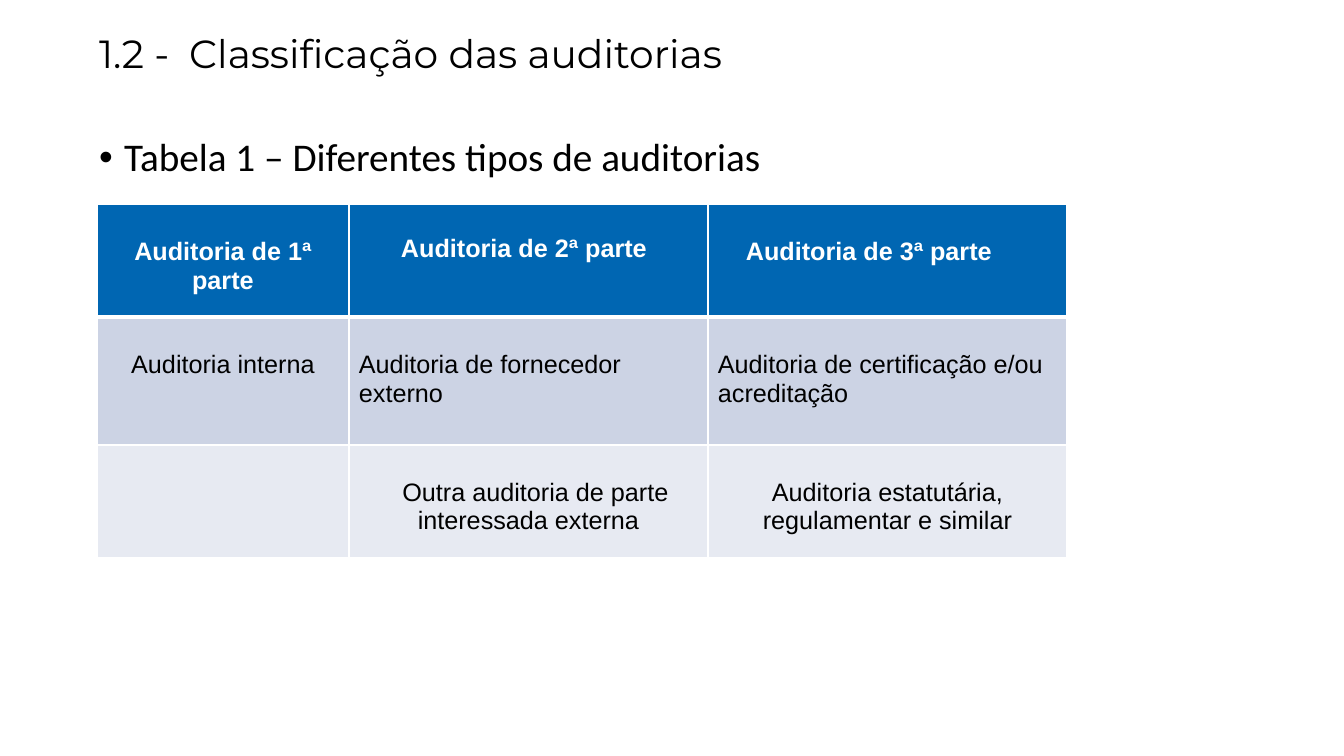
import pptx
import pptx.dml.color
import pptx.enum.text
import pptx.oxml
import pptx.oxml.ns
import pptx.util

ALIGN = pptx.enum.text.PP_ALIGN
ANCHOR = pptx.enum.text.MSO_ANCHOR


def px(length):
    return pptx.util.Emu(round(length * 914400 / 100.8))


def color(hex_string):
    return pptx.dml.color.RGBColor.from_string(hex_string)


def add_xml(parent, tag, attributes="", inner=""):
    namespace = pptx.oxml.ns.nsdecls("a")
    parent.append(pptx.oxml.parse_xml(
        f"<a:{tag} {namespace} {attributes}>{inner}</a:{tag}>"))


class AuditSlide:
    ink = "000000"
    paper = "FFFFFF"
    header_fill = "0066B2"
    row_fills = ("CCD3E4", "E7EAF2")

    def __init__(self, presentation):
        self.slide = presentation.slides.add_slide(presentation.slide_layouts[1])

    def style(self, paragraph, face, size, ink, align=ALIGN.LEFT, bold=False):
        paragraph.alignment = align
        paragraph.font.name = face
        paragraph.font.size = pptx.util.Pt(size)
        paragraph.font.bold = bold
        paragraph.font.color.rgb = color(ink)

    def placeholder(self, holder, box, text, face, anchor):
        holder.left, holder.top, holder.width, holder.height = map(px, box)
        frame = holder.text_frame
        frame.word_wrap = True
        frame.auto_size = pptx.enum.text.MSO_AUTO_SIZE.NONE
        frame.vertical_anchor = anchor
        paragraph = frame.paragraphs[0]
        paragraph.text = text
        paragraph.line_spacing = 0.9
        paragraph.space_before = pptx.util.Pt(0)
        return paragraph

    def title(self, box, text, tab):
        heading = self.placeholder(self.slide.shapes.title, box, text,
                                   "Montserrat", ANCHOR.MIDDLE)
        add_xml(heading._p.get_or_add_pPr(), "tabLst",
                inner=f'<a:tab pos="{px(tab)}" algn="l"/>')
        self.style(heading, "Montserrat", 28, self.ink)

    def bullet(self, box, text, indent):
        caption = self.placeholder(self.slide.placeholders[1], box, text,
                                   "Calibri", ANCHOR.TOP)
        properties = caption._p.get_or_add_pPr()
        properties.set("marL", str(px(indent)))
        properties.set("indent", str(-px(indent)))
        add_xml(properties, "buFont", 'typeface="Arial"')
        add_xml(properties, "buChar", 'char="•"')
        self.style(caption, "Calibri", 28, self.ink)

    def borders(self, cell, top, bottom):
        properties = cell._tc.get_or_add_tcPr()
        for side, points in zip("LRTB", (1, 1, top, bottom)):
            add_xml(properties, f"ln{side}", f'w="{pptx.util.Pt(points)}"',
                    f'<a:solidFill><a:srgbClr val="{self.paper}"/></a:solidFill>')

    def cell(self, cell, row, lines, align, left, top, first_indent):
        header = row == 0
        self.borders(cell, 3 if row == 1 else 1, 3 if header else 1)
        cell.fill.solid()
        cell.fill.fore_color.rgb = color(
            self.header_fill if header else self.row_fills[row - 1])
        cell.margin_left, cell.margin_top = px(left), px(top)
        cell.text = lines
        for paragraph in cell.text_frame.paragraphs:
            self.style(paragraph, "Arial", 18, self.paper if header else self.ink,
                       align, header)
        if first_indent:
            properties = cell.text_frame.paragraphs[0]._p.get_or_add_pPr()
            properties.set("marL", str(px(first_indent)))
            properties.set("indent", "0")

    def table(self, left, top, widths, heights, rows):
        box = map(px, (left, top, sum(widths), sum(heights)))
        audits = self.slide.shapes.add_table(len(rows), len(widths), *box).table
        audits.horz_banding = False
        for column, width in zip(audits.columns, widths):
            column.width = px(width)
        for row, height in zip(audits.rows, heights):
            row.height = px(height)
        for row_index, entries in enumerate(rows):
            for column_index, entry in enumerate(entries):
                self.cell(audits.cell(row_index, column_index), row_index, *entry)


def main():
    presentation = pptx.Presentation()
    presentation.slide_width, presentation.slide_height = px(1344), px(756)
    slide = AuditSlide(presentation)
    slide.title((89, 13, 1159, 86), "1.2 -\tClassificação das auditorias", 90)
    slide.bullet((89, 133, 1159, 533), "Tabela 1 – Diferentes tipos de auditorias", 25)
    slide.table(97, 204, (252, 359, 359), (113, 128, 113), (
        (("Auditoria de 1ª parte", ALIGN.CENTER, 10, 34, 0),
         ("Auditoria de 2ª parte", ALIGN.LEFT, 52, 31, 0),
         ("Auditoria de 3ª parte", ALIGN.LEFT, 38, 34, 0)),
        (("Auditoria interna", ALIGN.CENTER, 10, 34, 0),
         ("Auditoria de fornecedor externo", ALIGN.LEFT, 10, 34, 0),
         ("Auditoria de certificação e/ou\nacreditação", ALIGN.LEFT, 10, 34, 0)),
        (("", ALIGN.LEFT, 10, 34, 0),
         ("Outra auditoria de parte\ninteressada externa", ALIGN.CENTER, 10, 34, 14),
         ("Auditoria estatutária,\nregulamentar e similar", ALIGN.CENTER, 10, 34, 0)),
    ))
    presentation.save("out.pptx")


if __name__ == "__main__":
    main()
